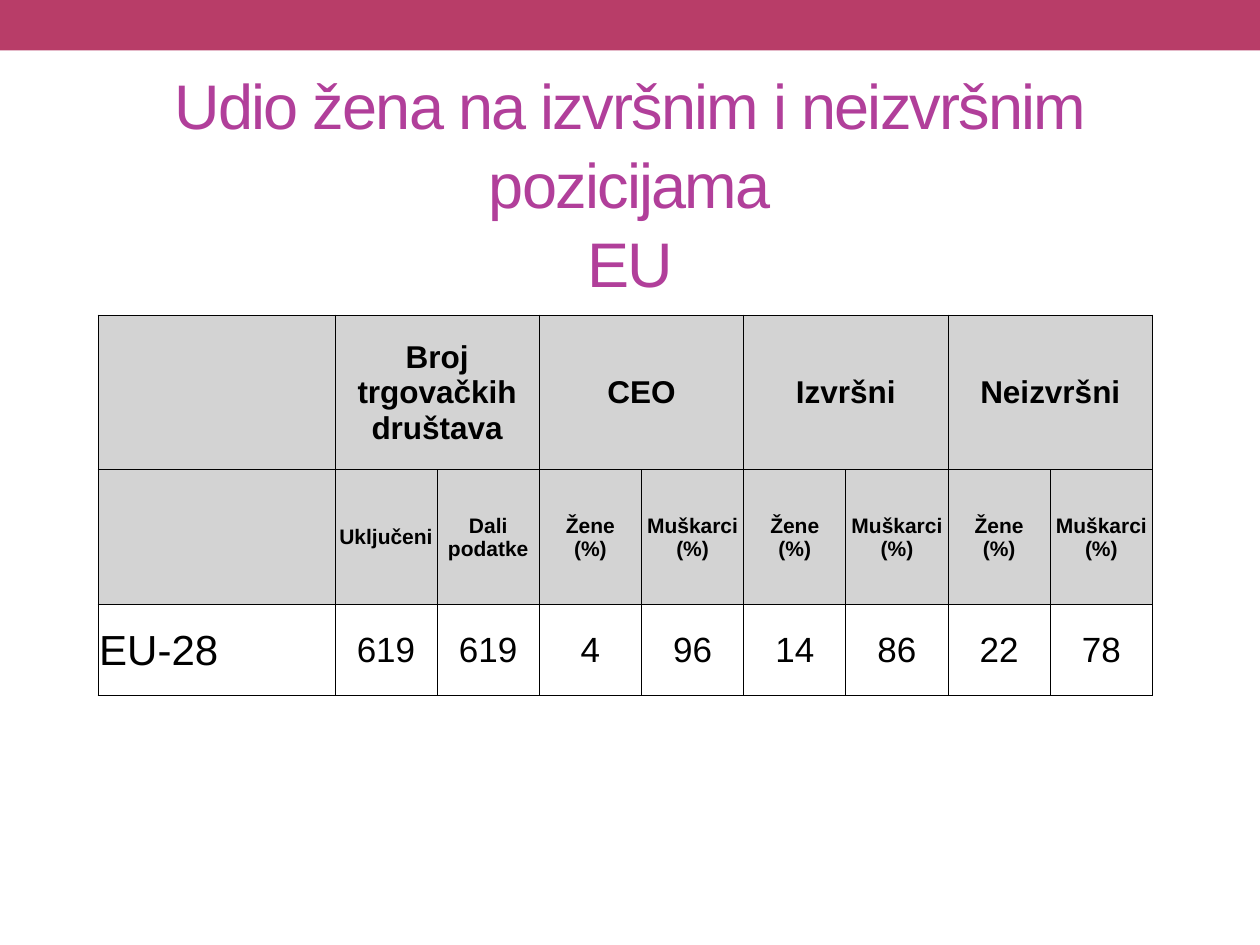
import pptx
import pptx.util
import pptx.dml.color
import pptx.enum.shapes
import pptx.enum.text
import pptx.oxml

Pt = pptx.util.Pt
RGBColor = pptx.dml.color.RGBColor
MIDDLE = pptx.enum.text.MSO_ANCHOR.MIDDLE
CENTER = pptx.enum.text.PP_ALIGN.CENTER
LEFT = pptx.enum.text.PP_ALIGN.LEFT

BAND = RGBColor(0xB8, 0x3D, 0x68)
HEADING = RGBColor(0xB1, 0x3F, 0x9A)
HEADER_GREY = RGBColor(0xD3, 0xD3, 0xD3)
BLACK = RGBColor(0, 0, 0)

HEADLINE = "Udio žena na izvršnim i neizvršnim pozicijama\vEU"
GROUPS = ["Broj trgovačkih društava", "CEO", "Izvršni", "Neizvršni"]
MEASURES = ["Uključeni", "Dali podatke"] + ["Žene\v(%)", "Muškarci\v(%)"] * 3
REGION = "EU-28"
FIGURES = [619, 619, 4, 96, 14, 86, 22, 78]

ROW_HEIGHTS = [88.4, 76.8, 52.4]
REGION_WIDTH, FIGURE_WIDTH = 135.4, 58.4
CELL_FORMAT = {
    "vertical_anchor": MIDDLE,
    "margin_left": Pt(0.7),
    "margin_right": Pt(0.7),
    "margin_top": Pt(0.7),
    "margin_bottom": Pt(0),
}
BORDER = (
    '<a:{side} xmlns:a="http://schemas.openxmlformats.org/drawingml/2006/main" w="6350">'
    '<a:solidFill><a:srgbClr val="{color}"/></a:solidFill></a:{side}>'
)


def apply(target, formats):
    for name, value in formats.items():
        setattr(target, name, value)


def write(frame, text, size, color, bold=False, align=CENTER):
    frame.text = text
    paragraph = frame.paragraphs[0]
    paragraph.alignment = align
    for run in paragraph.runs:
        apply(run.font, {"name": "Arial", "size": Pt(size), "bold": bold})
        run.font.color.rgb = color
    return paragraph


def style_cell(cell, is_header):
    apply(cell, CELL_FORMAT)
    properties = cell._tc.get_or_add_tcPr()
    for side in ("lnL", "lnR", "lnT", "lnB"):
        properties.append(pptx.oxml.parse_xml(BORDER.format(side=side, color=BLACK)))
    if is_header:
        cell.fill.solid()
        cell.fill.fore_color.rgb = HEADER_GREY
    else:
        cell.fill.background()


def add_band(slide, width):
    band = slide.shapes.add_shape(
        pptx.enum.shapes.MSO_SHAPE.RECTANGLE, 0, 0, width, Pt(28.8))
    band.shadow.inherit = False
    band.fill.solid()
    band.fill.fore_color.rgb = BAND
    band.line.fill.background()


def add_headline(slide):
    headline = slide.shapes.title
    apply(headline, {"left": Pt(36), "top": Pt(41.8), "width": Pt(648), "height": Pt(77.8)})
    apply(headline.text_frame, {
        "word_wrap": True,
        "auto_size": pptx.enum.text.MSO_AUTO_SIZE.NONE,
        "vertical_anchor": MIDDLE,
        "margin_top": Pt(50),
    })
    paragraph = write(headline.text_frame, HEADLINE, 36, HEADING)
    paragraph.line_spacing = 1.04
    for run in paragraph.runs:
        run.font._element.set("spc", "-100")


def add_figures(slide):
    columns = len(FIGURES) + 1
    table = slide.shapes.add_table(
        len(ROW_HEIGHTS), columns, Pt(56), Pt(180),
        Pt(REGION_WIDTH + FIGURE_WIDTH * len(FIGURES)), Pt(sum(ROW_HEIGHTS))).table
    apply(table, {"first_row": False, "horz_banding": False})
    for index, column in enumerate(table.columns):
        column.width = Pt(FIGURE_WIDTH if index else REGION_WIDTH)
    for index, row in enumerate(table.rows):
        row.height = Pt(ROW_HEIGHTS[index])
        for cell in row.cells:
            style_cell(cell, index < 2)
    for index, group in enumerate(GROUPS):
        first = 1 + 2 * index
        table.cell(0, first).merge(table.cell(0, first + 1))
        write(table.cell(0, first).text_frame, group, 18, BLACK, True)
    for index, (measure, figure) in enumerate(zip(MEASURES, FIGURES), 1):
        write(table.cell(1, index).text_frame, measure, 12, BLACK, True)
        write(table.cell(2, index).text_frame, str(figure), 20, BLACK)
    write(table.cell(2, 0).text_frame, REGION, 24, BLACK, align=LEFT)


def main():
    deck = pptx.Presentation()
    apply(deck, {"slide_width": Pt(720), "slide_height": Pt(540)})
    slide = deck.slides.add_slide(deck.slide_layouts[5])
    add_band(slide, deck.slide_width)
    add_headline(slide)
    add_figures(slide)
    deck.save("out.pptx")


if __name__ == "__main__":
    main()
